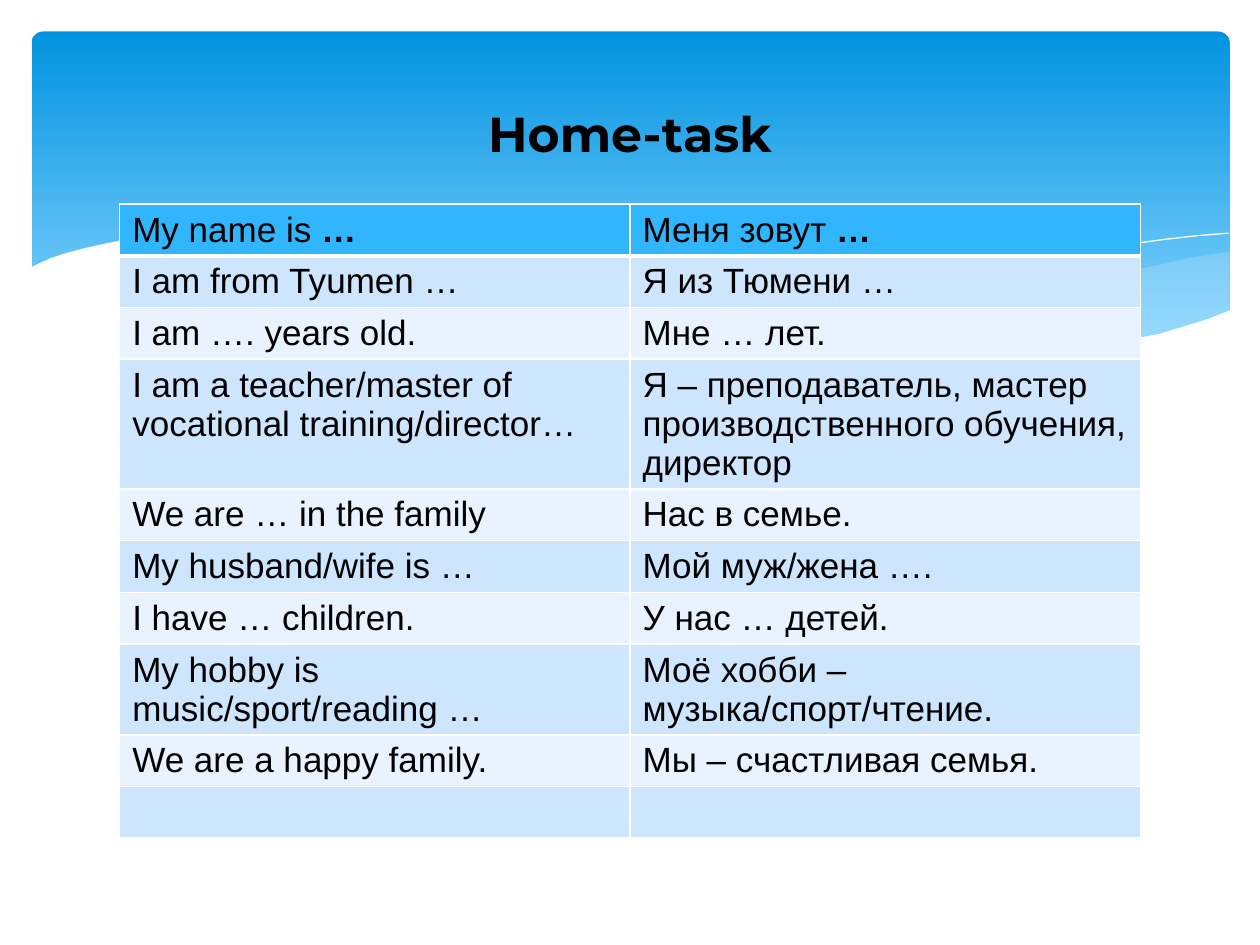
from lxml import etree
from pptx import Presentation
from pptx.dml.color import RGBColor
from pptx.enum.shapes import MSO_SHAPE
from pptx.enum.text import MSO_ANCHOR, PP_ALIGN
from pptx.oxml.ns import qn
from pptx.util import Inches, Pt

ROUND = MSO_SHAPE.ROUNDED_RECTANGLE
MIDDLE = MSO_ANCHOR.MIDDLE
CENTER = PP_ALIGN.CENTER

BLACK = RGBColor(0x00, 0x00, 0x00)
WHITE = RGBColor(0xFF, 0xFF, 0xFF)
DEEP = RGBColor(0x02, 0x93, 0xE0)
SKY = RGBColor(0x83, 0xD3, 0xFE)
MIST = RGBColor(0xC6, 0xE7, 0xFC)
HEAD = RGBColor(0x31, 0xB6, 0xFD)
BANDS = (RGBColor(0xCE, 0xE5, 0xFE), RGBColor(0xE8, 0xF3, 0xFF))

UNIT = Inches(0.01)
RIGHT_WAVE = [
    (975, 200), (948, 204), (921, 210), (891, 216), (861, 223), (805, 237),
    (753, 248), (706, 257), (661, 265), (691, 269), (719, 272), (745, 275),
    (769, 277), (803, 278), (835, 277), (863, 275), (889, 272), (913, 267),
    (935, 262), (949, 257), (963, 252), (976, 247), (976, 200)]
MID_WAVE = [
    (893, 273), (866, 269), (807, 260), (741, 247), (668, 231), (629, 222),
    (598, 214), (569, 208), (541, 203), (514, 198), (489, 194), (442, 189),
    (399, 186), (361, 185), (328, 187), (299, 189), (286, 191), (323, 196),
    (362, 203), (404, 211), (449, 222), (491, 232), (530, 240), (566, 248),
    (601, 255), (634, 261), (665, 266), (695, 270), (722, 274), (748, 276),
    (773, 277), (807, 278), (838, 278), (867, 276)]
LONG_LINE = [
    (309, 195), (328, 192), (353, 189), (387, 187), (433, 187), (469, 189),
    (510, 192), (556, 197), (608, 204), (665, 213), (727, 226), (795, 241),
    (831, 251), (869, 261), (907, 272)]
RIGHT_LINE = [
    (613, 257), (653, 246), (695, 235), (748, 223), (806, 210), (836, 204),
    (866, 199), (895, 194), (924, 190), (951, 187), (975, 185)]
WHITE_WAVE = [
    (977, 246), (959, 253), (940, 259), (920, 265), (899, 269), (875, 273),
    (850, 275), (823, 277), (793, 276), (761, 275), (726, 272), (688, 268),
    (648, 262), (603, 254), (555, 245), (503, 233), (447, 220), (391, 207),
    (340, 197), (292, 190), (250, 186), (211, 184), (161, 184), (132, 186),
    (106, 189), (85, 193), (67, 197), (52, 201), (40, 205), (29, 210),
    (23, 213), (23, 329), (977, 329)]

ROWS = [
    ("My name is …", "Меня зовут …"),
    ("I am from Tyumen …", "Я из Тюмени …"),
    ("I am …. years old.", "Мне … лет."),
    ("I am a teacher/master of vocational training/director…",
     "Я – преподаватель, мастер производственного обучения, директор"),
    ("We are … in the family", "Нас в семье."),
    ("My husband/wife is …", "Мой муж/жена …."),
    ("I have … children.", "У нас … детей."),
    ("My hobby is music/sport/reading …", "Моё хобби – музыка/спорт/чтение."),
    ("We are a happy family.", "Мы – счастливая семья."),
    ("", ""),
]


def add_panel(slide):
    """Add the rounded panel with its vertical gradient."""
    panel = slide.shapes.add_shape(
        ROUND, Inches(0.25), Inches(0.25), Inches(9.51), Inches(2.7))
    panel.adjustments[0] = 0.034
    panel.shadow.inherit = False
    panel.line.fill.background()
    panel.fill.gradient()
    panel.fill.gradient_angle = 270
    for stop, color, place in zip(panel.fill.gradient_stops, (DEEP, SKY), (0, 0.9)):
        stop.color.rgb = color
        stop.position = place


def add_path(slide, points, closed):
    """Return an outline through points given in hundredths of an inch."""
    pen = slide.shapes.build_freeform(*points[0], scale=UNIT)
    pen.add_line_segments(points[1:], close=closed)
    path = pen.convert_to_shape()
    path.shadow.inherit = False
    return path


def add_wave(slide, points, color, alpha=100):
    """Add a filled wave with the given opacity in percent."""
    wave = add_path(slide, points, True)
    wave.line.fill.background()
    wave.fill.solid()
    wave.fill.fore_color.rgb = color
    if alpha < 100:
        tint = wave.element.spPr.find(qn("a:solidFill"))[0]
        etree.SubElement(tint, qn("a:alpha"), val=str(alpha * 1000))


def add_curve(slide, points):
    """Add a white hairline curve."""
    curve = add_path(slide, points, False)
    curve.fill.background()
    curve.line.color.rgb = WHITE
    curve.line.width = Pt(0)


def set_font(para, name, size, bold):
    """Set the font of a whole paragraph."""
    font = para.font
    font.name, font.size, font.bold = name, Pt(size), bold
    font.color.rgb = BLACK


def set_title(slide, text):
    """Place the title in front of the waves."""
    title = slide.shapes.title
    title.left, title.top = Inches(0.5), Inches(0.37)
    title.width, title.height = Inches(9), Inches(1.37)
    title.text_frame.text = text
    title.text_frame.vertical_anchor = MIDDLE
    para = title.text_frame.paragraphs[0]
    para.alignment = CENTER
    set_font(para, "Montserrat", 28, True)
    title.element.getparent().append(title.element)


def set_edges(cell, **widths):
    """Draw white cell borders, widths in points by side."""
    props = cell._tc.get_or_add_tcPr()
    for spot, (side, width) in enumerate(widths.items()):
        edge = etree.Element(qn(f"a:ln{side}"), w=str(Pt(width)))
        fill = etree.SubElement(edge, qn("a:solidFill"))
        etree.SubElement(fill, qn("a:srgbClr"), val=str(WHITE))
        props.insert(spot, edge)


def fill_cell(cell, text, row):
    """Write and style one cell according to its row."""
    para = cell.text_frame.paragraphs[0]
    set_font(para, "Arial", 20, False)
    if row == 0:
        para.add_run().text = text[:-1]
        dots = para.add_run()
        dots.text = text[-1]
        dots.font.bold = True
    elif text:
        para.add_run().text = text
    cell.fill.solid()
    cell.fill.fore_color.rgb = BANDS[(row - 1) % 2] if row else HEAD
    set_edges(cell, L=1, R=1, T=3 if row == 1 else 1, B=1 if row else 3)


def add_phrases(slide):
    """Add the table of English phrases and their translations."""
    high = Inches(0.41)
    table = slide.shapes.add_table(
        len(ROWS), 2, Inches(0.95), Inches(1.62), Inches(8.1), high * len(ROWS)).table
    table.first_row = table.horz_banding = False
    for row, texts in enumerate(ROWS):
        table.rows[row].height = high
        for col, text in enumerate(texts):
            fill_cell(table.cell(row, col), text, row)


def main():
    """Build and save the slide."""
    deck = Presentation()
    deck.slide_width, deck.slide_height = Inches(10), Inches(7.5)
    slide = deck.slides.add_slide(deck.slide_layouts[5])
    add_panel(slide)
    add_wave(slide, RIGHT_WAVE, MIST, 29)
    add_wave(slide, MID_WAVE, MIST, 40)
    add_curve(slide, LONG_LINE)
    add_curve(slide, RIGHT_LINE)
    add_wave(slide, WHITE_WAVE, WHITE)
    set_title(slide, "Home-task")
    add_phrases(slide)
    deck.save("out.pptx")


if __name__ == "__main__":
    main()
